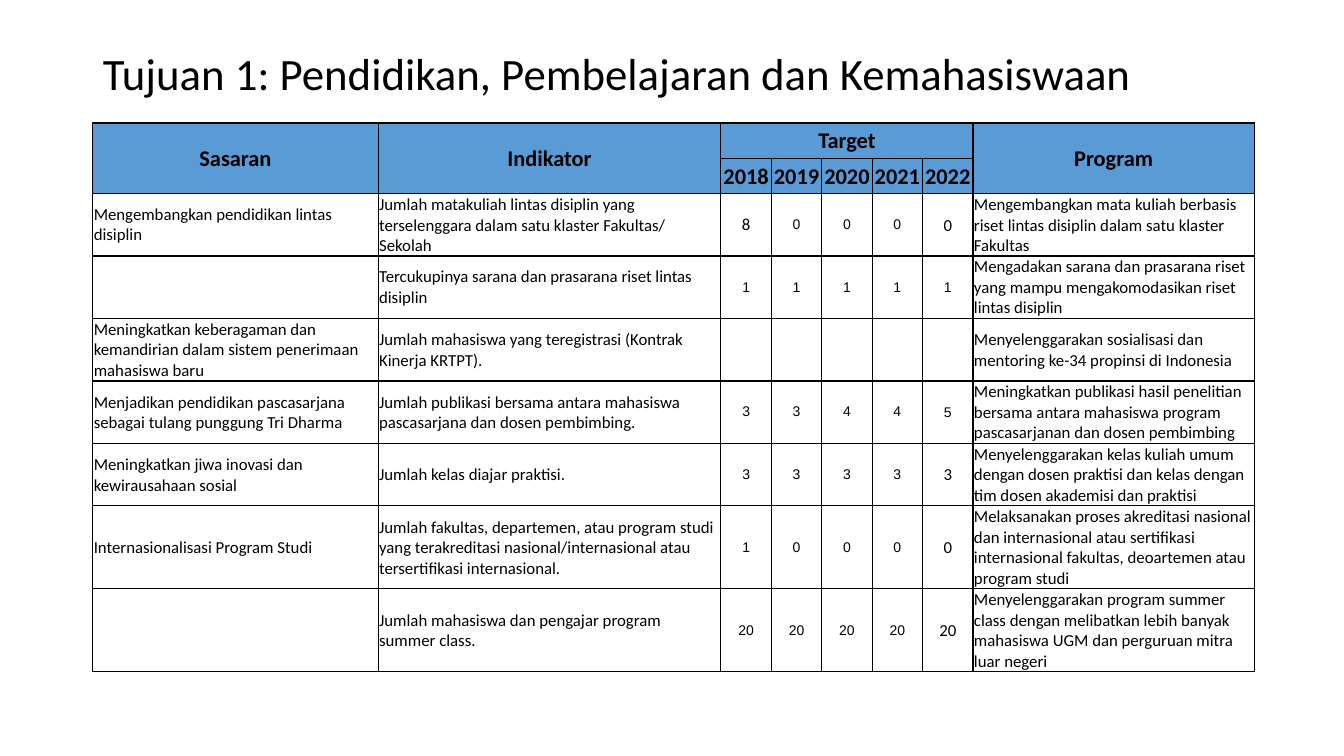
from lxml.etree import SubElement
from pptx import Presentation
from pptx.dml.color import RGBColor
from pptx.enum.text import MSO_ANCHOR as Anchor, MSO_AUTO_SIZE as AutoSize, PP_ALIGN as Align
from pptx.oxml.ns import qn
from pptx.util import Inches, Pt

BLACK = RGBColor(0x00, 0x00, 0x00)
BLUE = RGBColor(0x5B, 0x9B, 0xD5)

TITLE = "Tujuan 1: Pendidikan, Pembelajaran dan Kemahasiswaan"
YEARS = ["2018", "2019", "2020", "2021", "2022"]
HEADERS = [
    ["Sasaran", "Indikator", "Target", "", "", "", "", "Program"],
    ["", "", *YEARS, ""],
]
HEADER_MERGES = [(0, 0, 1, 0), (0, 1, 1, 1), (0, 2, 0, 6), (0, 7, 1, 7)]
COLUMN_WIDTHS = [2.83, 3.4] + [0.5] * len(YEARS) + [2.79]
ROW_HEIGHT = 0.35

# Sasaran, Indikator, yearly targets, Program
GOALS = [
    ("Mengembangkan pendidikan lintas disiplin",
     "Jumlah matakuliah lintas disiplin yang terselenggara dalam satu klaster Fakultas/ Sekolah",
     [8, 0, 0, 0, 0],
     "Mengembangkan mata kuliah berbasis riset lintas disiplin dalam satu klaster Fakultas"),
    ("",
     "Tercukupinya sarana dan prasarana riset lintas disiplin",
     [1, 1, 1, 1, 1],
     "Mengadakan sarana dan prasarana riset yang mampu mengakomodasikan riset lintas disiplin"),
    ("Meningkatkan keberagaman dan kemandirian dalam sistem penerimaan mahasiswa baru",
     "Jumlah mahasiswa yang teregistrasi (Kontrak Kinerja KRTPT).",
     [""] * len(YEARS),
     "Menyelenggarakan sosialisasi dan mentoring ke-34 propinsi di Indonesia"),
    ("Menjadikan pendidikan pascasarjana sebagai tulang punggung Tri Dharma",
     "Jumlah publikasi bersama antara mahasiswa pascasarjana dan dosen pembimbing.",
     [3, 3, 4, 4, 5],
     "Meningkatkan publikasi hasil penelitian bersama antara mahasiswa program "
     "pascasarjanan dan dosen pembimbing"),
    ("Meningkatkan jiwa inovasi dan kewirausahaan sosial",
     "Jumlah kelas diajar praktisi.",
     [3, 3, 3, 3, 3],
     "Menyelenggarakan kelas kuliah umum dengan dosen praktisi dan kelas dengan "
     "tim dosen akademisi dan praktisi"),
    ("Internasionalisasi Program Studi",
     "Jumlah fakultas, departemen, atau program studi yang terakreditasi "
     "nasional/internasional atau tersertifikasi internasional.",
     [1, 0, 0, 0, 0],
     "Melaksanakan proses akreditasi nasional dan internasional atau sertifikasi "
     "internasional fakultas, deoartemen atau program studi"),
    ("",
     "Jumlah mahasiswa dan pengajar program summer class.",
     [20, 20, 20, 20, 20],
     "Menyelenggarakan program summer class dengan melibatkan lebih banyak "
     "mahasiswa UGM dan perguruan mitra luar negeri"),
]
# (goal, column) cells that differ from the rule for their column
LARGE_TARGETS = {(0, 2), (0, 6), (4, 6), (5, 6), (6, 6)}
PADDED_TEXTS = {(0, 0), (1, 1)}
TIGHT_TARGETS = {(1, 2)}


class SlideBuilder:
    """Holds the text style and the slide being filled."""

    font = "Calibri"
    target_font = "Arial"

    def __init__(self, deck):
        self.page = deck.slides.add_slide(deck.slide_layouts[5])

    def format_text(self, para, size, font=None, bold=False, align=Align.LEFT):
        para.alignment = align
        for span in para.runs:
            span.font.name = font or self.font
            span.font.size = Pt(size)
            span.font.bold = bold
            span.font.color.rgb = BLACK

    def title(self, text, left, top, width, height):
        box = self.page.shapes.title
        box.left, box.top = Inches(left), Inches(top)
        box.width, box.height = Inches(width), Inches(height)
        frame = box.text_frame
        frame.text = text
        frame.auto_size = AutoSize.NONE
        frame.vertical_anchor = Anchor.MIDDLE
        para = frame.paragraphs[0]
        para.line_spacing = 0.9
        self.format_text(para, 32)

    def border(self, cell):
        properties = cell._tc.get_or_add_tcPr()
        for side in ("a:lnL", "a:lnR", "a:lnT", "a:lnB"):
            line = SubElement(properties, qn(side), w=str(Pt(1)))
            fill = SubElement(line, qn("a:solidFill"))
            SubElement(fill, qn("a:srgbClr"), val=str(BLACK))

    def cell(self, cell, text, size, padded=False, fill=None, **style):
        self.border(cell)
        if fill:
            cell.fill.solid()
            cell.fill.fore_color.rgb = fill
        else:
            cell.fill.background()
        cell.vertical_anchor = Anchor.MIDDLE
        cell.margin_left = cell.margin_right = Inches(0.01)
        cell.margin_top = Inches(0.03 if padded else 0.01)
        cell.margin_bottom = Inches(0.03 if padded else 0)
        if text:
            cell.text = text
            self.format_text(cell.text_frame.paragraphs[0], size, **style)

    def table(self, left, top):
        rows = len(HEADERS) + len(GOALS)
        table = self.page.shapes.add_table(
            rows, len(COLUMN_WIDTHS), Inches(left), Inches(top),
            Inches(sum(COLUMN_WIDTHS)), Inches(rows * ROW_HEIGHT)).table
        table.first_row = table.horz_banding = False
        for column, width in zip(table.columns, COLUMN_WIDTHS):
            column.width = Inches(width)
        for row in table.rows:
            row.height = Inches(ROW_HEIGHT)
        self.header_rows(table)
        self.goal_rows(table)

    def header_rows(self, table):
        for row, labels in enumerate(HEADERS):
            for column, label in enumerate(labels):
                self.cell(table.cell(row, column), label, 16,
                          fill=BLUE, bold=True, align=Align.CENTER)
        for top, left, bottom, right in HEADER_MERGES:
            table.cell(top, left).merge(table.cell(bottom, right))

    def goal_rows(self, table):
        last_year = 1 + len(YEARS)
        for goal, (aim, indicator, targets, program) in enumerate(GOALS):
            for column, value in enumerate([aim, indicator, *targets, program]):
                cell = table.cell(len(HEADERS) + goal, column)
                place = (goal, column)
                if 2 <= column <= last_year:
                    large = place in LARGE_TARGETS
                    self.cell(cell, str(value), 12 if large else 10,
                              padded=column < last_year and place not in TIGHT_TARGETS,
                              font=self.font if large else self.target_font,
                              align=Align.CENTER)
                else:
                    self.cell(cell, value, 12, padded=place in PADDED_TEXTS)


def main():
    deck = Presentation()
    deck.slide_width, deck.slide_height = Inches(13.33), Inches(7.5)
    builder = SlideBuilder(deck)
    builder.title(TITLE, 0.92, 0.4, 11.5, 0.71)
    builder.table(0.92, 1.22)
    deck.save("out.pptx")


if __name__ == "__main__":
    main()
